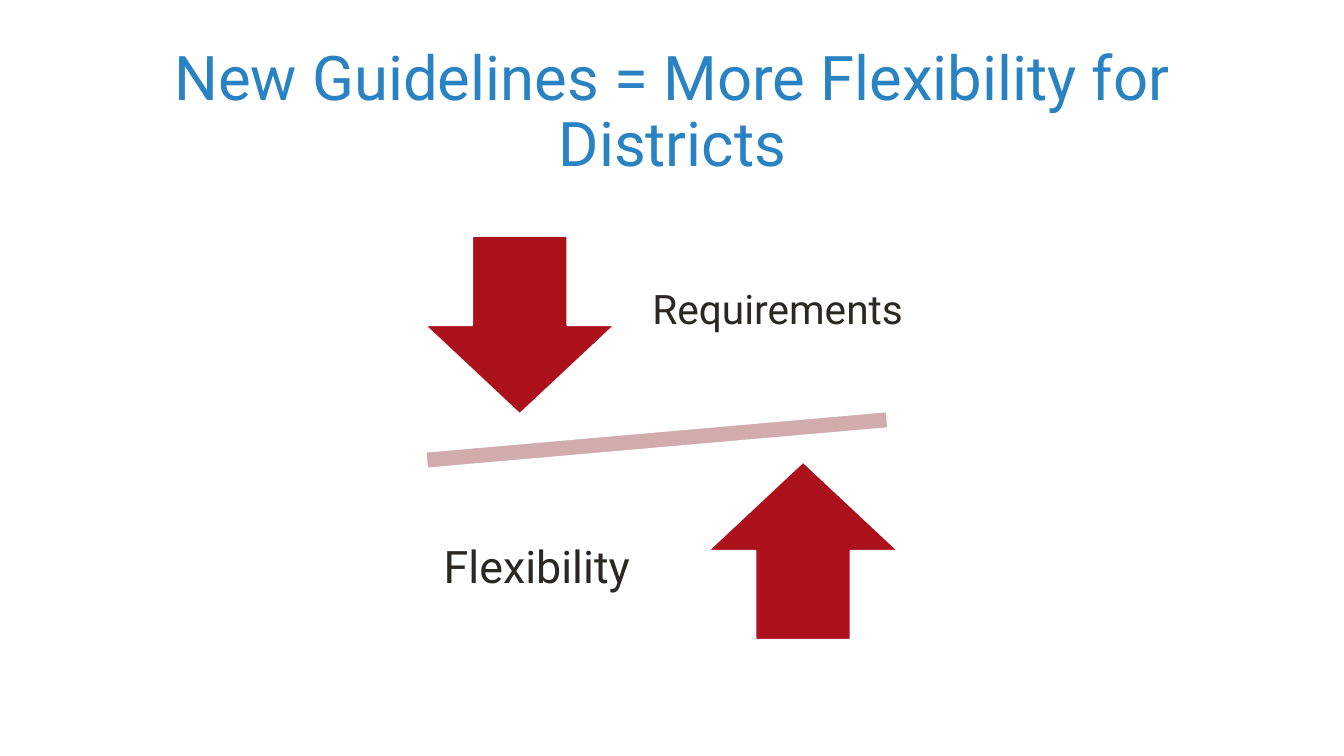
from dataclasses import dataclass

from pptx import Presentation
from pptx.dml.color import RGBColor
from pptx.enum import shapes, text
from pptx.util import Inches, Pt


@dataclass(frozen=True)
class Theme:
    """Colours, font and type sizes of the slide."""
    font: str = "Roboto"
    title: str = "2982C1"
    ink: str = "2B2823"
    arrow: str = "AB121C"
    beam: str = "D2ABAC"
    outline: str = "FFFFFF"
    title_size: float = 44
    requirements_size: float = 29
    flexibility_size: float = 32
    outline_width: float = 1.5


THEME = Theme()


def add_label(slide, box, wording, size, color, inset_x, inset_y):
    """Place centred text in the box."""
    frame = slide.shapes.add_textbox(*map(Inches, box)).text_frame
    frame.word_wrap = True
    frame.vertical_anchor = text.MSO_ANCHOR.MIDDLE
    frame.margin_left = frame.margin_right = Inches(inset_x)
    frame.margin_top = frame.margin_bottom = Inches(inset_y)
    paragraph = frame.paragraphs[0]
    paragraph.text = wording
    paragraph.alignment = text.PP_ALIGN.CENTER
    paragraph.line_spacing = 0.9
    paragraph.font.name = THEME.font
    paragraph.font.size = Pt(size)
    paragraph.font.color.rgb = RGBColor.from_string(color)


def add_figure(slide, kind, box, color):
    """Place a filled preset shape with the theme outline."""
    shape = slide.shapes.add_shape(kind, *map(Inches, box))
    shape.shadow.inherit = False
    shape.fill.solid()
    shape.fill.fore_color.rgb = RGBColor.from_string(color)
    shape.line.color.rgb = RGBColor.from_string(THEME.outline)
    shape.line.width = Pt(THEME.outline_width)
    return shape


def add_title(slide, box):
    """Place the slide title in the box."""
    add_label(slide, box, "New Guidelines = More Flexibility for Districts",
              THEME.title_size, THEME.title, 0.1, 0.05)


def add_balance(slide, box):
    """Draw the tilted beam with an arrow and a label on each side."""
    left, top, width, height = box
    arrow_width, arrow_height, beam_height = 1.89, 1.77, 0.72
    label_height = 1.85
    kinds = shapes.MSO_SHAPE

    beam_top = top + (height - beam_height) / 2
    beam = add_figure(slide, kinds.MATH_MINUS,
                      (left, beam_top, width, beam_height), THEME.beam)
    beam.rotation = 355

    add_figure(slide, kinds.DOWN_ARROW,
               (left + 0.82, top + 0.18, arrow_width, arrow_height),
               THEME.arrow)
    add_label(slide, (left + 2.84, top, 2.97, label_height), "Requirements",
              THEME.requirements_size, THEME.ink, 0.23, 0.23)

    add_figure(slide, kinds.UP_ARROW,
               (left + 3.63, top + height - 0.22 - arrow_height,
                arrow_width, arrow_height), THEME.arrow)
    add_label(slide,
              (left + 0.51, top + height - label_height, 2.85, label_height),
              "Flexibility", THEME.flexibility_size, THEME.ink, 0.25, 0.25)


def main():
    """Build and save the presentation."""
    presentation = Presentation()
    presentation.slide_width = Inches(13.33)
    presentation.slide_height = Inches(7.5)
    slide = presentation.slides.add_slide(presentation.slide_layouts[6])
    add_balance(slide, (3.39, 2.16, 6.25, 4.41))
    add_title(slide, (0.92, 0.4, 11.5, 1.45))
    presentation.save("out.pptx")


if __name__ == "__main__":
    main()
